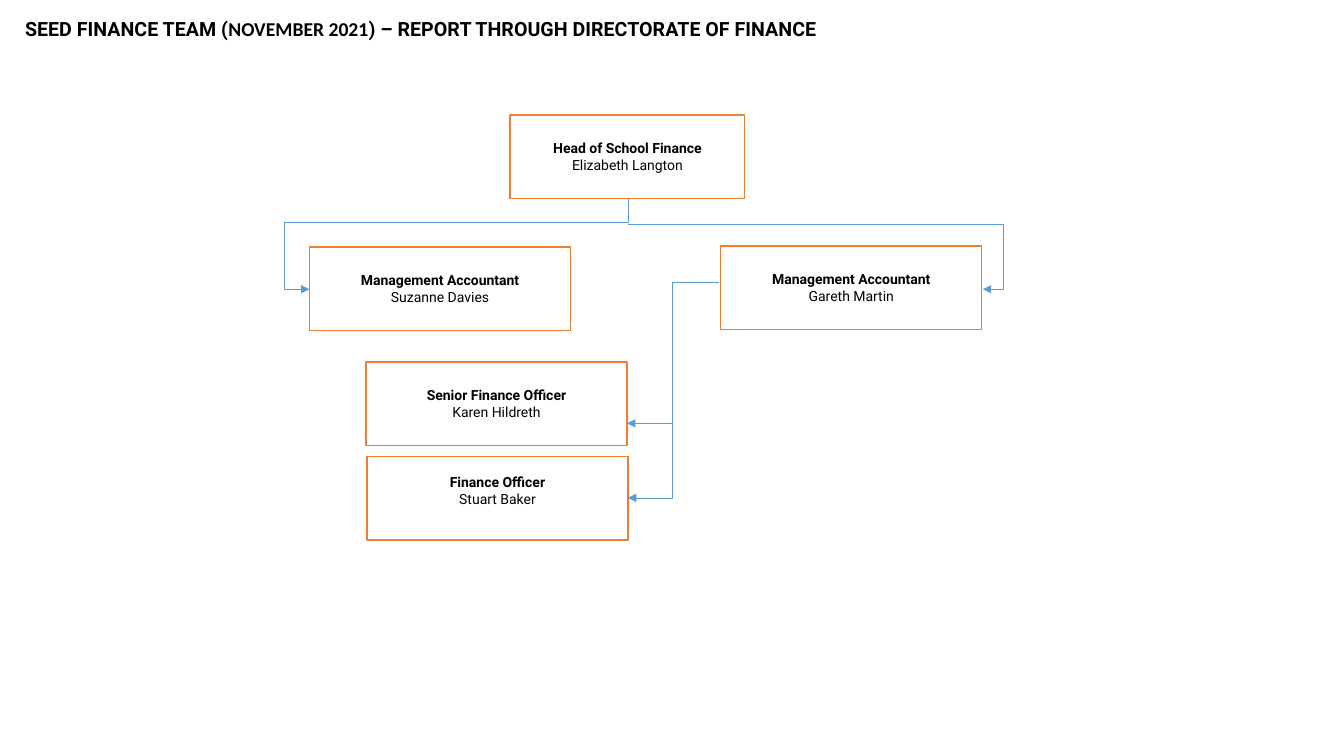
from lxml import etree
from pptx import Presentation
from pptx.dml.color import RGBColor
from pptx.enum.shapes import MSO_CONNECTOR, MSO_SHAPE
from pptx.enum.text import MSO_ANCHOR, PP_ALIGN
from pptx.oxml.ns import qn
from pptx.util import Pt

PX = 9144
BLACK = RGBColor(0x00, 0x00, 0x00)
ORANGE = RGBColor(0xED, 0x7D, 0x31)
BLUE = RGBColor(0x5B, 0x9B, 0xD5)
RECT = MSO_SHAPE.RECTANGLE
ELBOW = MSO_CONNECTOR.ELBOW
CENTER = PP_ALIGN.CENTER
MIDDLE = MSO_ANCHOR.MIDDLE

TITLE_BOX = (15, 12, 979, 50)
TITLE = [
    ("SEED FINANCE TEAM (", "Roboto"),
    ("NOVEMBER 2021", "Calibri"),
    (") – REPORT THROUGH DIRECTORATE OF FINANCE", "Roboto"),
]
POSTS = [
    ("Head of School Finance", "Elizabeth Langton", (506, 114, 233, 83), 5),
    ("Management Accountant", "Suzanne Davies", (307, 245, 259, 83), 5),
    ("Management Accountant", "Gareth Martin", (715, 244, 259, 83), 5),
    ("Senior Finance Officer", "Karen Hildreth", (363, 359, 259, 83), 5),
    ("Finance Officer", "Stuart Baker", (364, 453, 259, 83), 21),
]
LINKS = [
    ((623, 197), (307, 287), "bentConnector4", True, (26700, 107900)),
    ((623, 223), (975, 287), "bentConnector3", False, (105700,)),
    ((713, 280), (622, 420), "bentConnector3", False, ()),
    ((667, 418), (623, 494), "bentConnector2", True, ()),
]


def px(*values):
    return [round(v * PX) for v in values]


def add_run(p, text, **fmt):
    r = p.add_run()
    r.text = text
    r.font.color.rgb = BLACK
    for name, value in fmt.items():
        setattr(r.font, name, value)


def add_title(slide, box):
    tf = slide.shapes.add_textbox(*px(*box)).text_frame
    tf.word_wrap = True
    for text, font in TITLE:
        add_run(tf.paragraphs[0], text, name=font, size=Pt(14), bold=True)


def add_post(slide, role, person, box, bottom):
    sp = slide.shapes.add_shape(RECT, *px(*box))
    sp.shadow.inherit = False
    sp.fill.background()
    sp.line.color.rgb = ORANGE
    sp.line.width = Pt(1)
    tf = sp.text_frame
    tf.word_wrap = True
    tf.vertical_anchor = MIDDLE
    tf.margin_bottom = px(bottom)[0]
    for p, text, bold in (
        (tf.paragraphs[0], role, True),
        (tf.add_paragraph(), person, False),
    ):
        p.alignment = CENTER
        add_run(p, text, name="Roboto", size=Pt(10), bold=bold)


def add_link(slide, start, end, preset, turned, adjust):
    (x1, y1), (x2, y2) = start, end
    if turned:
        cx, cy = (x1 + x2) / 2, (y1 + y2) / 2
        dx, dy = (y2 - y1) / 2, (x1 - x2) / 2
        x1, y1, x2, y2 = cx - dx, cy - dy, cx + dx, cy + dy
    line = slide.shapes.add_connector(ELBOW, *px(x1, y1, x2, y2))
    line.line.color.rgb = BLUE
    line.line.width = Pt(0.5)
    spPr = line._element.spPr
    if turned:
        spPr.find(qn("a:xfrm")).set("rot", "5400000")
    geom = spPr.find(qn("a:prstGeom"))
    geom.set("prst", preset)
    guides = geom.find(qn("a:avLst"))
    for i, value in enumerate(adjust, 1):
        etree.SubElement(guides, qn("a:gd"), name=f"adj{i}", fmla=f"val {value}")
    etree.SubElement(spPr.find(qn("a:ln")), qn("a:tailEnd"), type="triangle")
    etree.SubElement(spPr, qn("a:effectLst"))


def main():
    prs = Presentation()
    prs.slide_width, prs.slide_height = px(1333.33, 750)
    slide = prs.slides.add_slide(prs.slide_layouts[6])
    add_title(slide, TITLE_BOX)
    for post in POSTS:
        add_post(slide, *post)
    for link in LINKS:
        add_link(slide, *link)
    prs.save("out.pptx")


if __name__ == "__main__":
    main()
